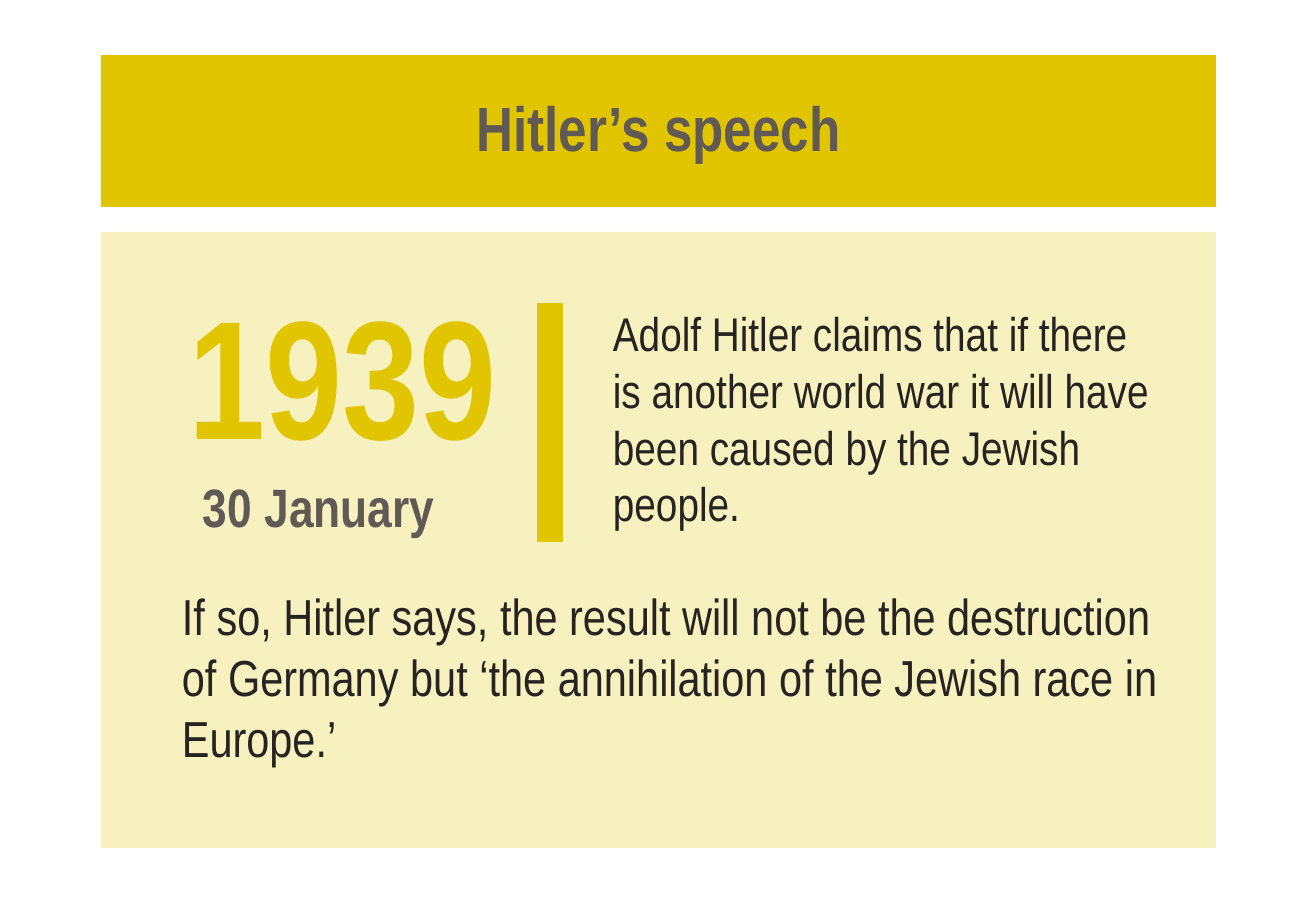
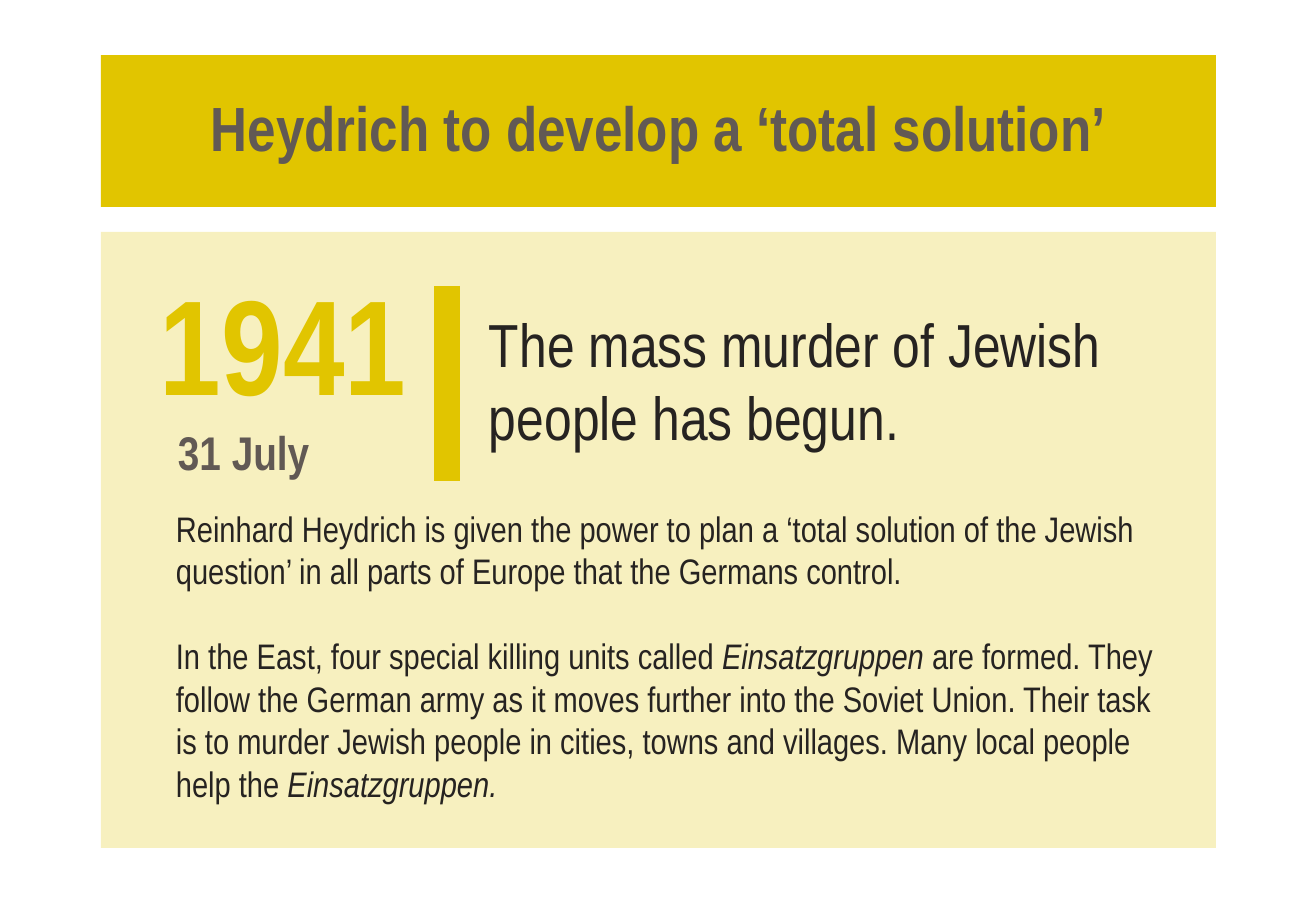
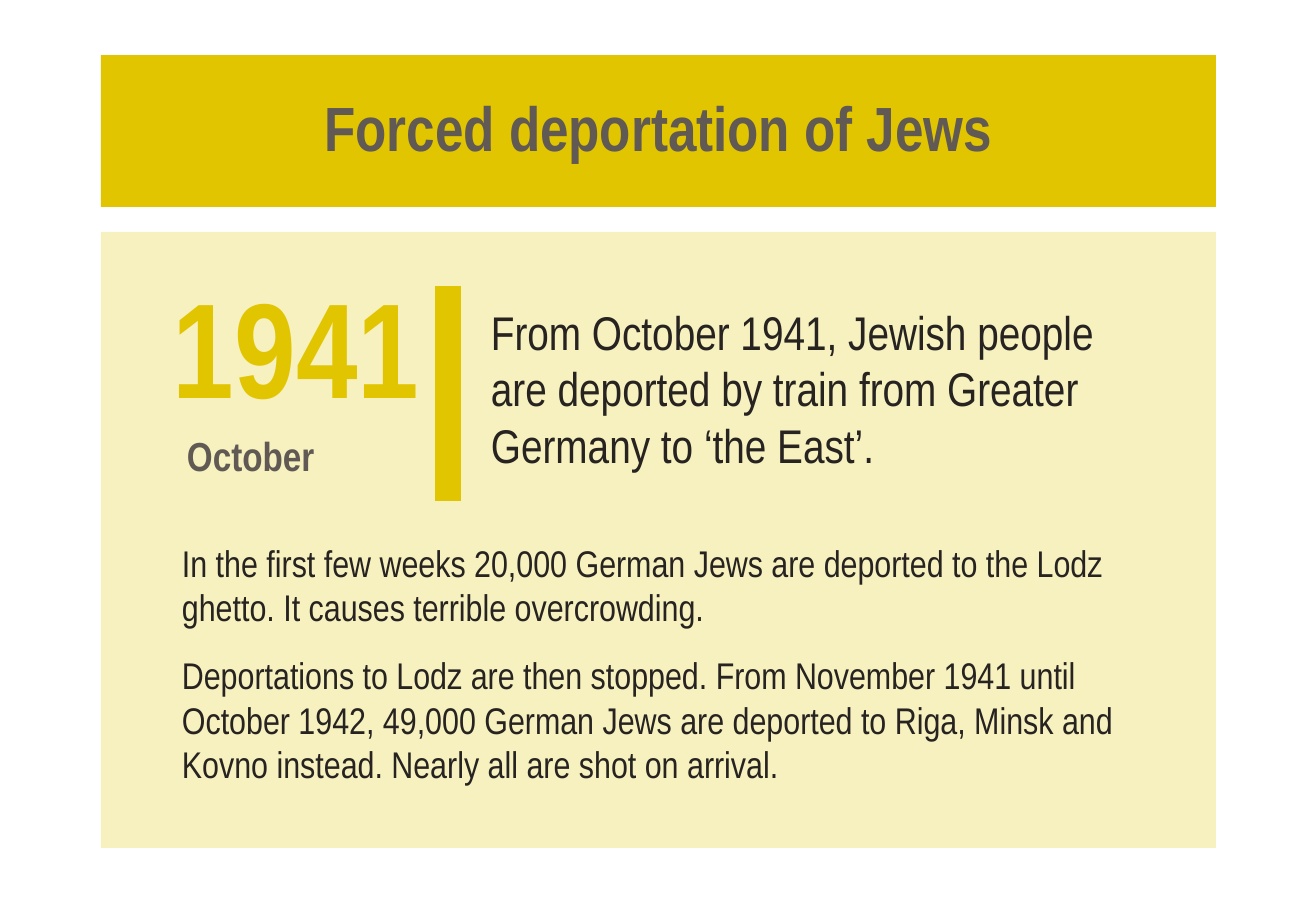
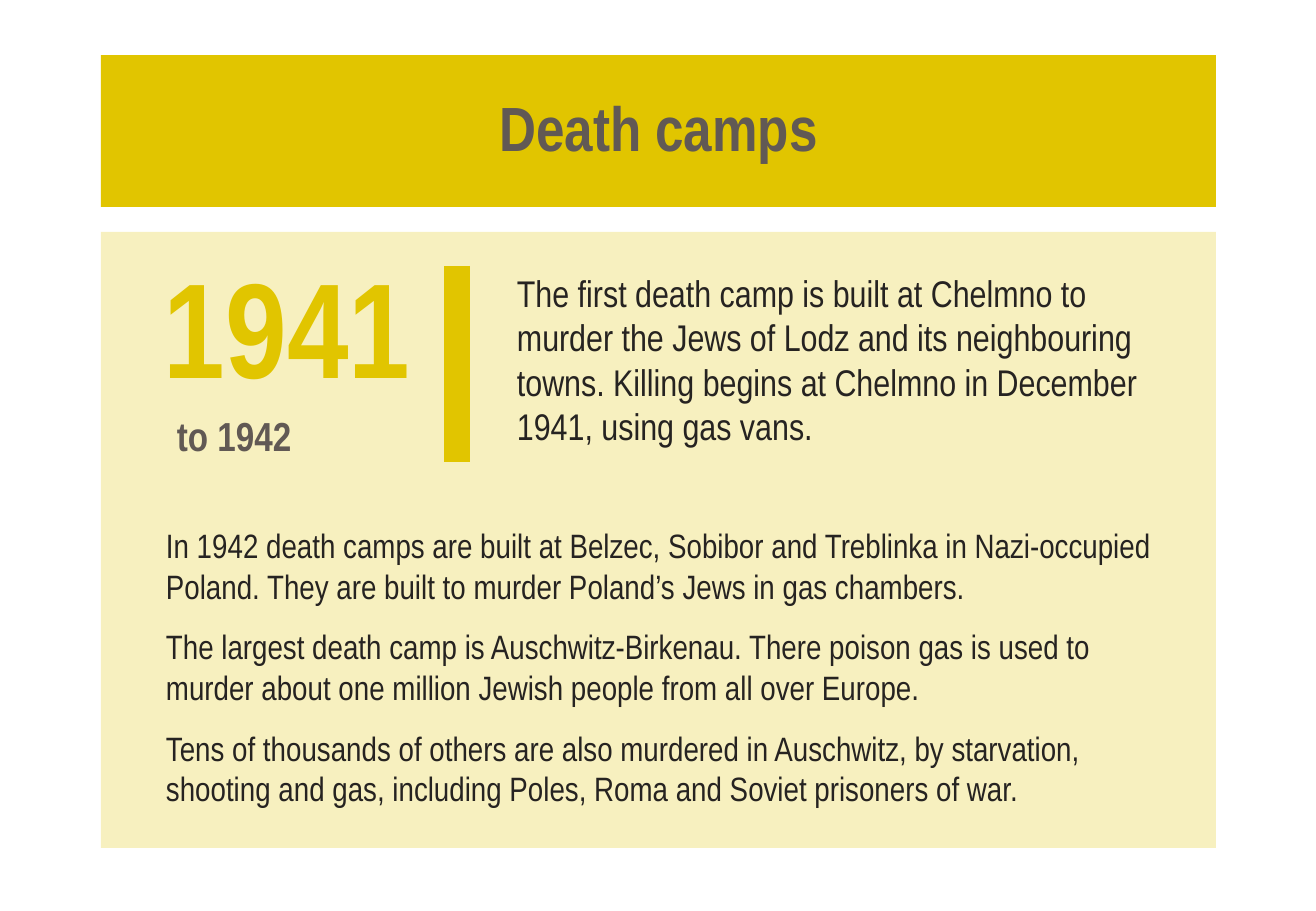
from dataclasses import dataclass

from lxml import etree
from pptx import Presentation
from pptx.dml import color
from pptx.enum import shapes, text
from pptx.oxml import ns
from pptx.util import Pt

PX = 7526
FONT = "Arial Narrow"
GOLD, GREY, INK = "E1C500", "615954", "262321"
SLIDE_SIZE = (1316, 911)
BAND = (101, 55, 1115, 152)
PANEL = (101, 232, 1115, 616)
LEAD_H = 228
YEAR_H = 290


@dataclass
class Event:
    title: str
    year: str
    year_at: tuple
    year_size: int
    date: str
    date_size: int
    date_indent: int
    date_gap: int
    bar: tuple
    lead: str
    lead_at: tuple
    lead_size: int
    body: list
    body_at: tuple
    body_size: int
    body_gap: int = 0


EVENTS = [
    Event(
        "Hitler’s speech", "1939", (76, 33), 100, "30 January", 32, 14, 0,
        (449, 71, 310),
        "Adolf Hitler claims that if there is another world war it will "
        "have been caused by the Jewish people.",
        (500, 72, 573), 28,
        [[("If so, Hitler says, the result will not be the destruction of "
           "Germany but ‘the annihilation of the Jewish race in Europe.’",
           False)]],
        (69, 347, 1005), 30),
    Event(
        "Heydrich to develop a ‘total solution’", "1941", (47, 23), 80,
        "31 July", 28, 18, 0, (346, 54, 249),
        "The mass murder of Jewish people has begun.",
        (376, 34, 679), 36,
        [[("Reinhard Heydrich is given the power to plan a ‘total solution "
           "of the Jewish question’ in all parts of Europe that the Germans "
           "control.", False)],
         [("In the East, four special killing units called ", False),
          ("Einsatzgruppen", True),
          (" are formed. They follow the German army as it moves further "
           "into the Soviet Union. Their task is to murder Jewish people in "
           "cities, towns and villages. Many local people help the ", False),
          ("Einsatzgruppen.", True)]],
        (63, 269, 1001), 21, 25),
    Event(
        "Forced deportation of Jews", "1941", (60, 26), 80,
        "October", 24, 14, 3, (347, 54, 269),
        "From October 1941, Jewish people are deported by train from "
        "Greater Germany to ‘the East’.",
        (378, 42, 686), 28,
        [[("In the first few weeks 20,000 German Jews are deported to the "
           "Lodz ghetto. It causes terrible overcrowding.", False)],
         [("Deportations to Lodz are then stopped. From November 1941 until "
           "October 1942, 49,000 German Jews are deported to Riga, Minsk and "
           "Kovno instead. Nearly all are shot on arrival.", False)]],
        (69, 302, 1024), 22, 14),
    Event(
        "Death camps", "1941", (51, 6), 80, "to 1942", 24, 13, 3,
        (356, 34, 230),
        "The first death camp is built at Chelmno to murder the Jews of Lodz "
        "and its neighbouring towns. Killing begins at Chelmno in December "
        "1941, using gas vans.",
        (404, 13, 686), 22,
        [[("In 1942 death camps are built at Belzec, Sobibor and Treblinka "
           "in Nazi-occupied Poland. They are built to murder Poland’s Jews "
           "in gas chambers.", False)],
         [("The largest death camp is Auschwitz-Birkenau. There poison gas "
           "is used to murder about one million Jewish people from all over "
           "Europe.", False)],
         [("Tens of thousands of others are also murdered in Auschwitz, by "
           "starvation, shooting and gas, including Poles, Roma and Soviet "
           "prisoners of war.", False)]],
        (53, 287, 1021), 20, 12),
]


def px(*values):
    return [v * PX for v in values]


def rgb(value):
    return color.RGBColor.from_string(value)


def paint(sp, value):
    sp.fill.solid()
    sp.fill.fore_color.rgb = rgb(value)


def add_run(p, words, size, value, bold=False, italic=False):
    r = p.add_run()
    r.text = words
    r.font.name = FONT
    r.font.size = Pt(size)
    r.font.bold = bold
    r.font.italic = italic
    r.font.color.rgb = rgb(value)


def add_text(slide, box, x, y, w, h, anchor=text.MSO_ANCHOR.TOP):
    sp = slide.shapes.add_textbox(*px(box[0] + x, box[1] + y, w, h))
    tf = sp.text_frame
    tf.word_wrap = True
    tf.vertical_anchor = anchor
    return tf


def add_title(slide, box, words):
    sp = slide.shapes.title
    sp.left, sp.top, sp.width, sp.height = px(*box)
    paint(sp, GOLD)
    tf = sp.text_frame
    tf.auto_size = text.MSO_AUTO_SIZE.NONE
    tf.vertical_anchor = text.MSO_ANCHOR.MIDDLE
    p = tf.paragraphs[0]
    p.alignment = text.PP_ALIGN.CENTER
    p.line_spacing = 0.9
    add_run(p, words, 37, GREY, bold=True)


def add_panel(slide, box):
    sp = slide.shapes.add_shape(shapes.MSO_SHAPE.RECTANGLE, *px(*box))
    sp.shadow.inherit = False
    paint(sp, GOLD)
    sp.line.fill.background()
    fill = sp.element.spPr.find(ns.qn("a:solidFill"))
    etree.SubElement(fill[0], ns.qn("a:alpha"), val="25000")


def add_date(slide, box, event):
    x, y = event.year_at
    tf = add_text(slide, box, x, y, event.bar[0] - x, YEAR_H)
    add_run(tf.paragraphs[0], event.year, event.year_size, GOLD, bold=True)
    p = tf.add_paragraph()
    p.space_before = Pt(event.date_gap)
    p._p.get_or_add_pPr().set("marL", str(event.date_indent * PX))
    add_run(p, event.date, event.date_size, GREY, bold=True)


def add_bar(slide, box, x, top, bottom):
    left = box[0] + x
    line = slide.shapes.add_connector(
        shapes.MSO_CONNECTOR.STRAIGHT,
        *px(left, box[1] + top, left, box[1] + bottom))
    line.line.color.rgb = rgb(GOLD)
    line.line.width = Pt(15)
    etree.SubElement(line.element.spPr, ns.qn("a:effectLst"))


def add_lead(slide, box, event):
    tf = add_text(slide, box, *event.lead_at, LEAD_H, text.MSO_ANCHOR.MIDDLE)
    add_run(tf.paragraphs[0], event.lead, event.lead_size, INK)


def add_body(slide, box, event):
    x, y, w = event.body_at
    tf = add_text(slide, box, x, y, w, box[3] - y)
    for i, runs in enumerate(event.body):
        p = tf.add_paragraph() if i else tf.paragraphs[0]
        p.space_before = Pt(event.body_gap if i else 0)
        for words, italic in runs:
            add_run(p, words, event.body_size, INK, italic=italic)


def add_event(prs, event):
    slide = prs.slides.add_slide(prs.slide_layouts[5])
    add_panel(slide, PANEL)
    add_title(slide, BAND, event.title)
    add_date(slide, PANEL, event)
    add_bar(slide, PANEL, *event.bar)
    add_lead(slide, PANEL, event)
    add_body(slide, PANEL, event)


def main():
    prs = Presentation()
    prs.slide_width, prs.slide_height = px(*SLIDE_SIZE)
    for event in EVENTS:
        add_event(prs, event)
    prs.save("out.pptx")


if __name__ == "__main__":
    main()
